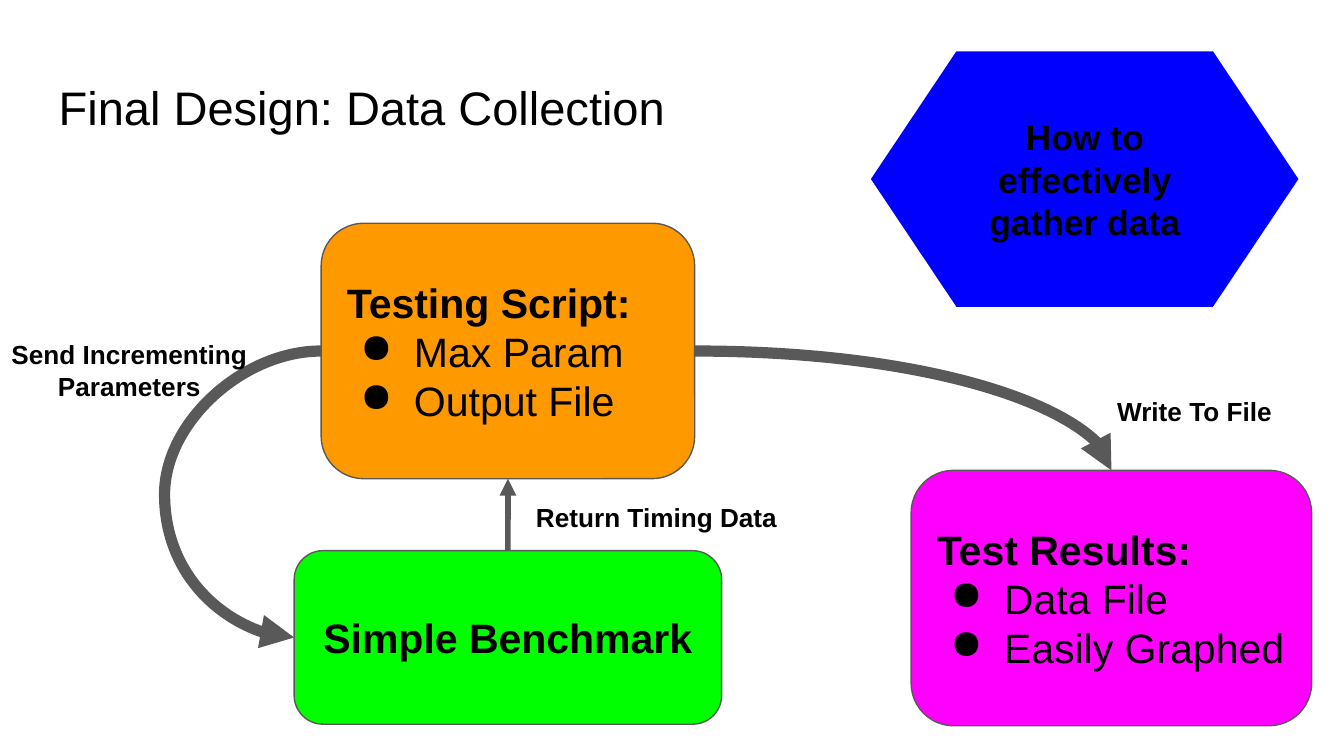
"""Build the data collection design slide."""
from lxml import etree
from pptx import Presentation
from pptx.dml.color import RGBColor
from pptx.enum.shapes import MSO_CONNECTOR, MSO_SHAPE
from pptx.enum.text import MSO_ANCHOR, PP_ALIGN
from pptx.oxml.ns import qn
from pptx.util import Cm, Pt

BLACK = RGBColor(0x00, 0x00, 0x00)
GRAY = RGBColor(0x59, 0x59, 0x59)
BLUE = RGBColor(0x00, 0x00, 0xFF)
GREEN = RGBColor(0x00, 0xFF, 0x00)
ORANGE = RGBColor(0xFF, 0x99, 0x00)
MAGENTA = RGBColor(0xFF, 0x00, 0xFF)
ROUNDED = MSO_SHAPE.ROUNDED_RECTANGLE
PREPARATION = MSO_SHAPE.FLOWCHART_PREPARATION
STRAIGHT, CURVE = MSO_CONNECTOR.STRAIGHT, MSO_CONNECTOR.CURVE
LEFT, CENTER = PP_ALIGN.LEFT, PP_ALIGN.CENTER
TOP_ANCHOR, MIDDLE = MSO_ANCHOR.TOP, MSO_ANCHOR.MIDDLE
TOP_SITE, LEFT_SITE, BOTTOM_SITE, RIGHT_SITE = range(4)


class DesignSlide:
    font = "Arial"
    inset = Cm(0.25)

    def __init__(self, slide):
        self.slide = slide

    def set_text(self, shape, lines, size, bold, align, anchor):
        frame = shape.text_frame
        frame.text = "\n".join(lines)
        frame.word_wrap = True
        frame.vertical_anchor = anchor
        frame.margin_left = frame.margin_right = self.inset
        frame.margin_top = frame.margin_bottom = self.inset
        for index, paragraph in enumerate(frame.paragraphs):
            paragraph.alignment = align
            font = paragraph.runs[0].font
            font.name, font.size = self.font, Pt(size)
            font.bold = bold and index == 0
            font.color.rgb = BLACK
            if index:
                self.bullet(paragraph)

    def bullet(self, paragraph):
        properties = paragraph._p.get_or_add_pPr()
        properties.set("marL", str(Cm(1.27)))
        properties.set("indent", str(Cm(-1.02)))
        color = etree.SubElement(properties, qn("a:buClr"))
        etree.SubElement(color, qn("a:srgbClr"), val=str(BLACK))
        etree.SubElement(properties, qn("a:buChar"), char="●")

    def label(self, box, text, size=14, bold=True, align=CENTER, anchor=TOP_ANCHOR):
        shape = self.slide.shapes.add_textbox(*map(Cm, box))
        self.set_text(shape, [text], size, bold, align, anchor)

    def block(self, kind, box, fill, lines, size=22, align=LEFT, line=GRAY):
        shape = self.slide.shapes.add_shape(kind, *map(Cm, box))
        shape.shadow.inherit = False
        shape.fill.solid()
        shape.fill.fore_color.rgb = fill
        if line is None:
            shape.line.fill.background()
        else:
            shape.line.color.rgb = line
            shape.line.width = Pt(0.75)
        self.set_text(shape, lines, size, True, align, MIDDLE)
        return shape

    def arrow(self, kind, start, start_site, end, end_site, width, preset=None, bend=None):
        connector = self.slide.shapes.add_connector(kind, 0, 0, 0, 0)
        connector.begin_connect(start, start_site)
        connector.end_connect(end, end_site)
        connector.line.color.rgb = GRAY
        connector.line.width = Pt(width)
        properties = connector._element.spPr
        etree.SubElement(properties.find(qn("a:ln")), qn("a:tailEnd"), type="triangle")
        etree.SubElement(properties, qn("a:effectLst"))
        geometry = properties.find(qn("a:prstGeom"))
        if preset:
            geometry.set("prst", preset)
        if bend:
            guides = geometry.find(qn("a:avLst"))
            etree.SubElement(guides, qn("a:gd"), name="adj1", fmla=f"val {round(bend * 100000)}")


def main():
    presentation = Presentation()
    presentation.slide_width, presentation.slide_height = Cm(25.4), Cm(14.29)
    design = DesignSlide(presentation.slides.add_slide(presentation.slide_layouts[6]))

    design.label((0.86, 1.24, 23.67, 1.6), "Final Design: Data Collection", 25.2, False, LEFT)
    design.block(PREPARATION, (16.46, 0.97, 8.08, 4.83), BLUE,
                 ["How to effectively gather data"], 19, CENTER, None)
    benchmark = design.block(ROUNDED, (5.56, 10.41, 8.08, 3.28), GREEN,
                             ["Simple Benchmark"], align=CENTER)
    testing = design.block(ROUNDED, (6.07, 4.22, 7.06, 4.83), ORANGE,
                           ["Testing Script:", "Max Param", "Output File"])
    results = design.block(ROUNDED, (17.22, 8.89, 7.57, 4.83), MAGENTA,
                           ["Test Results:", "Data File", "Easily Graphed"])

    design.arrow(CURVE, testing, LEFT_SITE, benchmark, LEFT_SITE, 6, bend=5.8)
    design.arrow(STRAIGHT, benchmark, TOP_SITE, testing, BOTTOM_SITE, 3)
    design.arrow(CURVE, testing, RIGHT_SITE, results, TOP_SITE, 6, "curvedConnector2")

    design.label((-0.3, 6.15, 5.49, 2.01), "Send Incrementing Parameters")
    design.label((9.88, 9.22, 6.55, 1.02), "Return Timing Data", align=LEFT)
    design.label((20.35, 6.76, 4.45, 2.01), "Write To File", anchor=MIDDLE)
    presentation.save("out.pptx")


if __name__ == "__main__":
    main()
